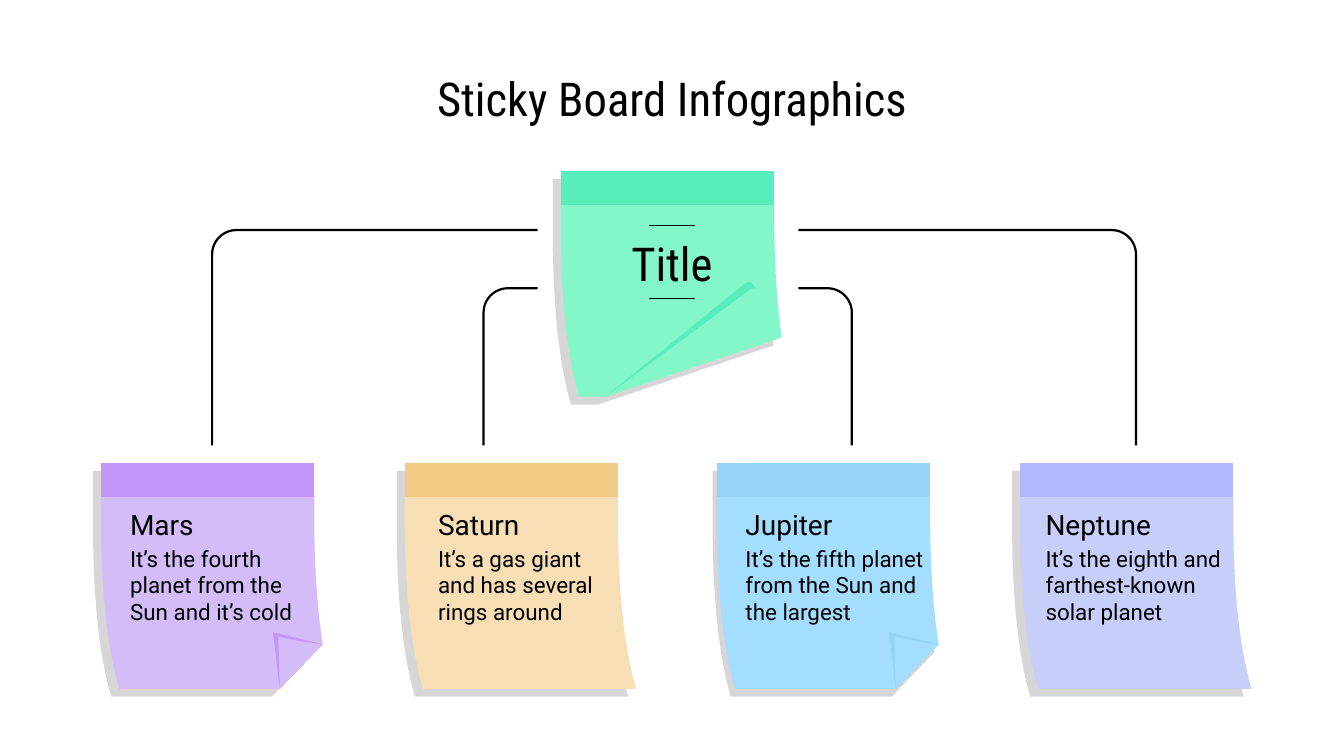
"""Builds a slide of paper notes: one title note linked to four planet notes."""
from lxml.etree import SubElement
from pptx import Presentation
from pptx.dml.color import RGBColor
from pptx.enum.shapes import MSO_CONNECTOR
from pptx.enum.text import MSO_ANCHOR, MSO_AUTO_SIZE, PP_ALIGN
from pptx.oxml.ns import qn
from pptx.util import Cm, Pt

COLORS = {
    "ink": "000000", "shadow": "D6D6D6",
    "purple": "D3BCF7", "purple_dark": "C397FA",
    "orange": "F7DEB5", "orange_dark": "F2CC85",
    "blue": "A3DDFF", "blue_dark": "95D4F4",
    "indigo": "C7CEF9", "indigo_dark": "B0B8FF",
    "green": "84F7CA", "green_dark": "58EDBD",
}
DISPLAY, BODY = "Roboto Condensed", "Roboto"


def curve(start, pull_start, pull_end, end, steps=16):
    """Return points along a cubic Bézier curve."""
    points = []
    for step in range(steps + 1):
        t = step / steps
        weights = ((1 - t) ** 3, 3 * t * (1 - t) ** 2, 3 * t * t * (1 - t), t ** 3)
        corners = (start, pull_start, pull_end, end)
        points.append(tuple(sum(w * c[axis] for w, c in zip(weights, corners))
                            for axis in (0, 1)))
    return points


WIDTH, BAND = 4.03, 0.65
BAND_OUTLINE = [(0, BAND), (0, 0), (WIDTH, 0), (WIDTH, BAND)]
LEFT_EDGE = curve((0, BAND), (0, 1.16), (-0.04, 2.95), (0.34, 4.27))
RIGHT_EDGES = {
    "plain": [(x + WIDTH, y) for x, y in reversed(LEFT_EDGE)],
    "corner": [(3.38, 4.27)] + curve((4.19, 3.43), (4.01, 2.29), (WIDTH, 1.08), (WIDTH, BAND)),
    "torn": [(0.84, 4.27)] + curve((4.17, 3.15), (4.03, 2.08), (WIDTH, 1.07), (WIDTH, BAND)),
}
FOLDS = {
    "plain": [],
    "corner": [
        ("_dark", [(3.25, 3.2), (3.38, 4.27), (4.19, 3.43)]),
        ("", [(3.38, 4.27)] + curve((4.19, 3.43), (3.89, 3.4), (3.62, 3.35), (3.35, 3.28))),
    ],
    "torn": [
        ("", [(3.63, 2.22), (3.58, 2.24), (0.84, 4.27)]
         + curve((4.17, 3.15), (4.01, 2.87), (3.86, 2.57), (3.73, 2.27))),
        ("_dark", [(3.56, 2.1), (3.48, 2.13), (0.84, 4.27), (3.58, 2.24),
                   (3.63, 2.22), (3.68, 2.22), (3.63, 2.14)]),
    ],
}


class Board:
    """Holds the style and the current slide."""

    def __init__(self, slide, colors):
        self.slide = slide
        self.shapes = slide.shapes
        self.colors = {name: RGBColor.from_string(code) for name, code in colors.items()}

    def outline(self, points, left=0, top=0, closed=True):
        start, *rest = [(Cm(left + x), Cm(top + y)) for x, y in points]
        builder = self.shapes.build_freeform(*start)
        builder.add_line_segments(rest, close=closed)
        shape = builder.convert_to_shape()
        shape.shadow.inherit = False
        return shape

    def paper(self, points, left, top, color):
        piece = self.outline(points, left, top)
        piece.fill.solid()
        piece.fill.fore_color.rgb = self.colors[color]
        piece.line.fill.background()
        return piece

    def note(self, left, top, color, form, cast=0.15):
        right_edge = RIGHT_EDGES[form]
        pieces = [
            self.paper(BAND_OUTLINE[1:] + right_edge[::-1] + LEFT_EDGE[::-1],
                       left - cast, top + 0.15, "shadow"),
            self.paper(LEFT_EDGE + right_edge, left, top, color),
            self.paper(BAND_OUTLINE, left, top, color + "_dark"),
        ]
        pieces += [self.paper(points, left, top, color + tone) for tone, points in FOLDS[form]]
        self.shapes.add_group_shape(pieces)

    def branch(self, inner, outer, top, bottom=8.42, radius=0.46):
        turn = radius if outer > inner else -radius
        bend = curve((outer - turn, top), (outer - turn * 0.45, top),
                     (outer, top + radius * 0.45), (outer, top + radius))
        link = self.outline([(inner, top), *bend, (outer, bottom)], closed=False)
        link.fill.background()
        link.line.color.rgb = self.colors["ink"]
        link.line.width = Pt(1.19)

    def rule(self, left, right, y):
        line = self.shapes.add_connector(MSO_CONNECTOR.STRAIGHT, Cm(left), Cm(y), Cm(right), Cm(y))
        line.line.color.rgb = self.colors["ink"]
        line.line.width = Pt(0.81)
        SubElement(line._element.spPr, qn("a:effectLst"))

    def fill_text(self, holder, text, size, font, align, anchor):
        frame = holder.text_frame
        frame.text = text
        frame.word_wrap = True
        frame.auto_size = MSO_AUTO_SIZE.NONE
        frame.vertical_anchor = anchor
        frame.margin_left = frame.margin_right = Cm(0.25)
        frame.margin_top = frame.margin_bottom = Cm(0.25)
        paragraph = frame.paragraphs[0]
        paragraph.alignment = align
        paragraph.font.size = Pt(size)
        paragraph.font.name = font
        paragraph.font.color.rgb = self.colors["ink"]

    def title(self, text, left, top, width, height):
        heading = self.shapes.title
        heading.left, heading.top = Cm(left), Cm(top)
        heading.width, heading.height = Cm(width), Cm(height)
        self.fill_text(heading, text, 25, DISPLAY, PP_ALIGN.CENTER, MSO_ANCHOR.MIDDLE)

    def text(self, text, left, top, width, height, size, font=BODY,
             align=PP_ALIGN.LEFT, anchor=MSO_ANCHOR.MIDDLE):
        box = self.shapes.add_textbox(Cm(left), Cm(top), Cm(width), Cm(height))
        self.fill_text(box, text, size, font, align, anchor)


def main():
    deck = Presentation()
    deck.slide_width, deck.slide_height = Cm(25.4), Cm(14.29)
    board = Board(deck.slides.add_slide(deck.slide_layouts[5]), COLORS)

    board.title("Sticky Board Infographics", 1.97, 1.28, 21.46, 1.12)
    board.note(10.6, 3.23, "green", "torn")
    for y in (4.26, 5.64):
        board.rule(12.27, 13.13, y)
    board.text("Title", 10.54, 4.4, 4.32, 1.12, 25, DISPLAY, PP_ALIGN.CENTER)

    for inner, outer, top in ((10.16, 4.01, 4.35), (10.16, 9.14, 5.45),
                              (15.09, 16.1, 5.45), (15.09, 21.47, 4.35)):
        board.branch(inner, outer, top)

    planets = [
        ("Mars", "It’s the fourth planet from the Sun and it’s cold",
         1.91, 2.21, "purple", "corner", 0.15),
        ("Saturn", "It’s a gas giant and has several rings around",
         7.65, 8.03, "orange", "plain", 0.15),
        ("Jupiter", "It’s the fifth planet from the Sun and the largest",
         13.55, 13.84, "blue", "corner", 0.08),
        ("Neptune", "It’s the eighth and farthest-known solar planet",
         19.28, 19.51, "indigo", "plain", 0.15),
    ]
    for planet, fact, note_left, text_left, color, form, cast in planets:
        board.note(note_left, 8.75, color, form, cast)
        board.text(planet, text_left, 9.55, 3.91, 0.74, 15)
        board.text(fact, text_left, 10.29, 3.91, 1.78, 12, anchor=MSO_ANCHOR.BOTTOM)

    deck.save("out.pptx")


if __name__ == "__main__":
    main()
